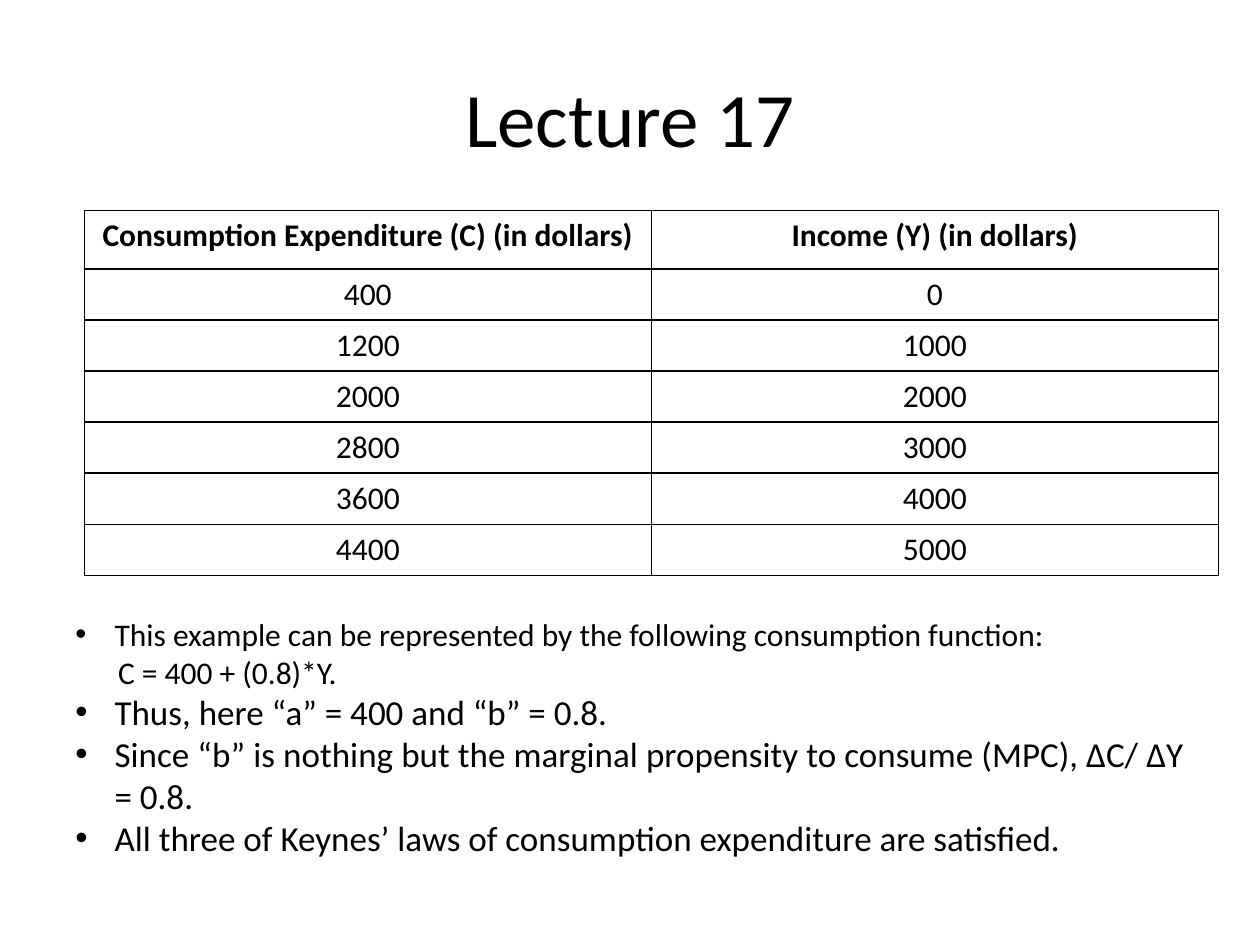
from lxml.etree import SubElement
from pptx import Presentation
from pptx.dml.color import RGBColor
from pptx.enum.text import MSO_ANCHOR, PP_ALIGN
from pptx.oxml.ns import qn
from pptx.util import Cm, Pt

BLACK = RGBColor(0, 0, 0)
FONT = "Calibri"
HEADS = ("Consumption Expenditure (C) (in dollars)", "Income (Y) (in dollars)")
DATA = [(400, 0), (1200, 1000), (2000, 2000), (2800, 3000), (3600, 4000), (4400, 5000)]
NOTES = [
    ("This example can be represented by the following consumption function:", 18, True),
    ("C = 400 + (0.8)*Y.", 18, False),
    ("Thus, here “a” = 400 and “b” = 0.8.", 20, True),
    ("Since “b” is nothing but the marginal propensity to consume (MPC), ∆C/ ∆Y = 0.8.", 20, True),
    ("All three of Keynes’ laws of consumption expenditure are satisfied.", 20, True),
]


def add_run(para, text, size, bold=False):
    run = para.add_run()
    run.text = text
    font = run.font
    font.name, font.size, font.bold = FONT, Pt(size), bold
    font.color.rgb = BLACK


def add_frame(slide, box, anchor):
    frame = slide.shapes.add_textbox(*map(Cm, box)).text_frame
    frame.word_wrap = True
    frame.vertical_anchor = anchor
    return frame


def add_title(slide, box):
    para = add_frame(slide, box, MSO_ANCHOR.MIDDLE).paragraphs[0]
    para.alignment = PP_ALIGN.CENTER
    add_run(para, "Lecture 17", 44)


def add_border(cell):
    props = cell._tc.get_or_add_tcPr()
    for at, side in enumerate(("lnL", "lnR", "lnT", "lnB")):
        line = props.makeelement(qn(f"a:{side}"), {"w": str(Pt(1))})
        fill = SubElement(line, qn("a:solidFill"))
        SubElement(fill, qn("a:srgbClr"), val=str(BLACK))
        props.insert(at, line)


def add_grid(slide, box):
    rows = [HEADS, *DATA]
    table = slide.shapes.add_table(len(rows), len(HEADS), *map(Cm, box)).table
    table.first_row = table.horz_banding = False
    for r, row in enumerate(rows):
        table.rows[r].height = Cm(1.03) if r else Cm(1.18)
        for c, value in enumerate(row):
            cell = table.cell(r, c)
            cell.fill.background()
            add_border(cell)
            para = cell.text_frame.paragraphs[0]
            para.alignment = PP_ALIGN.CENTER
            add_run(para, str(value), 18, r == 0)


def add_notes(slide, box):
    frame = add_frame(slide, box, MSO_ANCHOR.TOP)
    for i, (text, size, dot) in enumerate(NOTES):
        para = frame.add_paragraph() if i else frame.paragraphs[0]
        para.alignment = PP_ALIGN.JUSTIFY
        props = para._p.get_or_add_pPr()
        props.set("marL", str(Cm(0.79 if dot else 0.86)))
        if dot:
            props.set("indent", str(Cm(-0.79)))
            SubElement(props, qn("a:buFont"), typeface="Arial")
            SubElement(props, qn("a:buChar"), char="•")
        add_run(para, text, size)


def main():
    deck = Presentation()
    deck.slide_width, deck.slide_height = Cm(25.4), Cm(19.05)
    slide = deck.slides.add_slide(deck.slide_layouts[6])
    add_title(slide, (1.27, 0.76, 22.86, 3.18))
    add_grid(slide, (1.7, 4.24, 22.86, 7.36))
    add_notes(slide, (1.27, 12.27, 22.86, 5.21))
    deck.save("out.pptx")


if __name__ == "__main__":
    main()
